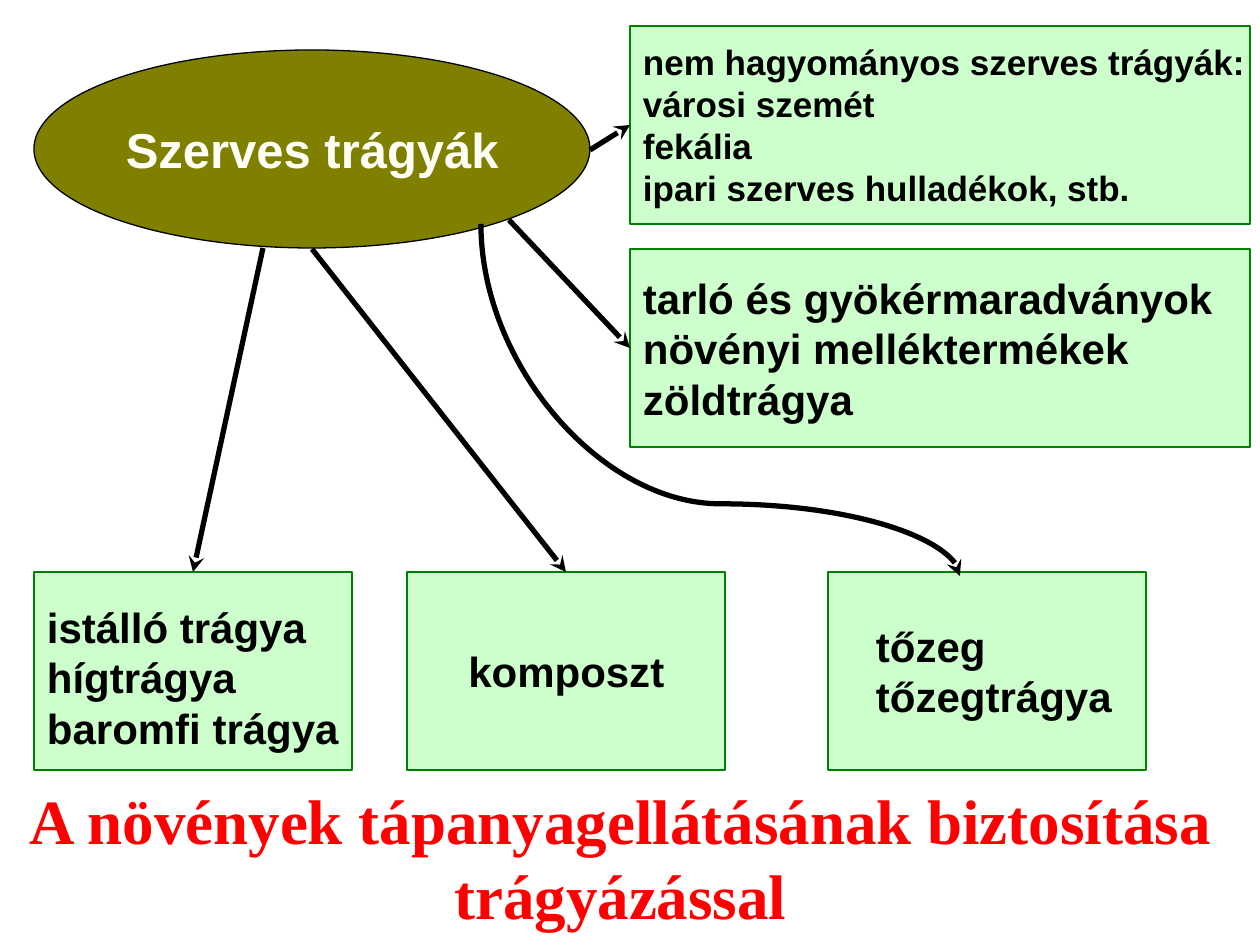
from lxml import etree
from pptx import Presentation
from pptx.dml.color import RGBColor
from pptx.enum.shapes import MSO_CONNECTOR, MSO_SHAPE
from pptx.enum.text import MSO_ANCHOR, MSO_AUTO_SIZE, PP_ALIGN
from pptx.oxml.ns import qn
from pptx.util import Emu, Pt

OVAL, RECT = MSO_SHAPE.OVAL, MSO_SHAPE.RECTANGLE
STRAIGHT, CURVE = MSO_CONNECTOR.STRAIGHT, MSO_CONNECTOR.CURVE
LEFT, CENTER = PP_ALIGN.LEFT, PP_ALIGN.CENTER
TOP, MIDDLE = MSO_ANCHOR.TOP, MSO_ANCHOR.MIDDLE
TOP_SIDE, LEFT_SIDE = 0, 1

OLIVE = RGBColor(0x80, 0x80, 0x00)
MINT = RGBColor(0xCC, 0xFF, 0xCC)
GREEN = RGBColor(0x00, 0x80, 0x00)
BLACK = RGBColor(0x00, 0x00, 0x00)
IVORY = RGBColor(0xFF, 0xFF, 0xF7)
RED = RGBColor(0xFF, 0x00, 0x00)

TITLE = "A növények tápanyagellátásának biztosítása trágyázással"
ROOT = "Szerves trágyák"
HEIGHT, NARROW, WIDE = 198, 318, 620
LOWER_TOP, RIGHT_LEFT = 572, 630
PAD_X, PAD_Y = 13, 6

# left, top, width, text size, alignment, left inset, top inset, lines
BOXES = {
    "farmyard": (34, LOWER_TOP, NARROW, 24, LEFT, PAD_X, 18,
                 ["istálló trágya", "hígtrágya", "baromfi trágya"]),
    "compost": (407, LOWER_TOP, NARROW, 24, CENTER, PAD_X, PAD_Y, ["komposzt"]),
    "peat": (828, LOWER_TOP, NARROW, 24, LEFT, 48, PAD_Y,
             ["tőzeg", "tőzegtrágya"]),
    "residues": (RIGHT_LEFT, 249, WIDE, 24, LEFT, PAD_X, PAD_Y,
                 ["tarló és gyökérmaradványok", "növényi melléktermékek",
                  "zöldtrágya"]),
    "unusual": (RIGHT_LEFT, 26, WIDE, 20, LEFT, PAD_X, PAD_Y,
                ["nem hagyományos szerves trágyák:", "városi szemét", "fekália",
                 "ipari szerves hulladékok, stb."]),
}
# start point, target box, side of the box
ARROWS = [
    ((263, 248), "farmyard", TOP_SIDE),
    ((509, 220), "residues", LEFT_SIDE),
    ((590, 150), "unusual", LEFT_SIDE),
    ((312, 249), "compost", TOP_SIDE),
]
CURVE_START, CURVE_END, CURVE_BEND = (481, 224), (960, 576), 79500


def px(n):
    return Emu(round(n * 914400 / 126))


def write(tf, lines, font, size, color, align):
    for i, line in enumerate(lines):
        p = tf.paragraphs[0] if i == 0 else tf.add_paragraph()
        p.alignment = align
        r = p.add_run()
        r.text = line
        r.font.name, r.font.size, r.font.bold = font, Pt(size), True
        r.font.color.rgb = color


def add_node(kind, box, fill, line, line_width, insets):
    sp = slide.shapes.add_shape(kind, *map(px, box))
    sp.shadow.inherit = False
    sp.fill.solid()
    sp.fill.fore_color.rgb = fill
    sp.line.color.rgb = line
    sp.line.width = Pt(line_width)
    tf = sp.text_frame
    tf.word_wrap = False
    tf.vertical_anchor = MIDDLE
    tf.margin_left, tf.margin_top = map(px, insets)
    return sp


def add_arrow(kind, start, end):
    c = slide.shapes.add_connector(kind, *map(px, (*start, *end)))
    c.line.color.rgb = BLACK
    c.line.width = Pt(3)
    etree.SubElement(c.line._get_or_add_ln(), qn("a:tailEnd"), type="stealth")
    etree.SubElement(c._element.spPr, qn("a:effectLst"))
    return c


def add_downward_curve(start, end, bend):
    """A curve that leaves downwards: its frame is turned a quarter about its centre."""
    mid_x, mid_y = (start[0] + end[0]) / 2, (start[1] + end[1]) / 2
    half_w, half_h = (end[1] - start[1]) / 2, (end[0] - start[0]) / 2
    c = add_arrow(CURVE, (mid_x + half_w, mid_y - half_h),
                  (mid_x - half_w, mid_y + half_h))
    spPr = c._element.spPr
    spPr.find(qn("a:xfrm")).set("rot", str(270 * 60000))
    geom = spPr.find(qn("a:prstGeom"))
    guides = geom.find(qn("a:avLst"))
    if guides is None:
        guides = etree.SubElement(geom, qn("a:avLst"))
    etree.SubElement(guides, qn("a:gd"), name="adj1", fmla=f"val {bend}")


prs = Presentation()
prs.slide_width, prs.slide_height = px(1260), px(945)
slide = prs.slides.add_slide(prs.slide_layouts[5])

title = slide.shapes.title
title.left, title.top, title.width, title.height = map(px, (15, 775, 1211, 165))
tf = title.text_frame
tf.word_wrap = True
tf.auto_size = MSO_AUTO_SIZE.NONE
tf.vertical_anchor = TOP
write(tf, [TITLE], "Times New Roman", 36, RED, CENTER)

root = add_node(OVAL, (34, 50, 556, HEIGHT), OLIVE, BLACK, 0.75, (PAD_X, PAD_Y))
write(root.text_frame, [ROOT], "Arial", 28, IVORY, CENTER)

nodes = {}
for name, (x, y, w, size, align, inset_x, inset_y, lines) in BOXES.items():
    nodes[name] = add_node(RECT, (x, y, w, HEIGHT), MINT, GREEN, 1.5,
                           (inset_x, inset_y))
    write(nodes[name].text_frame, lines, "Arial", size, BLACK, align)

for start, target, side in ARROWS:
    add_arrow(STRAIGHT, start, start).end_connect(nodes[target], side)
add_downward_curve(CURVE_START, CURVE_END, CURVE_BEND)

prs.save("out.pptx")
